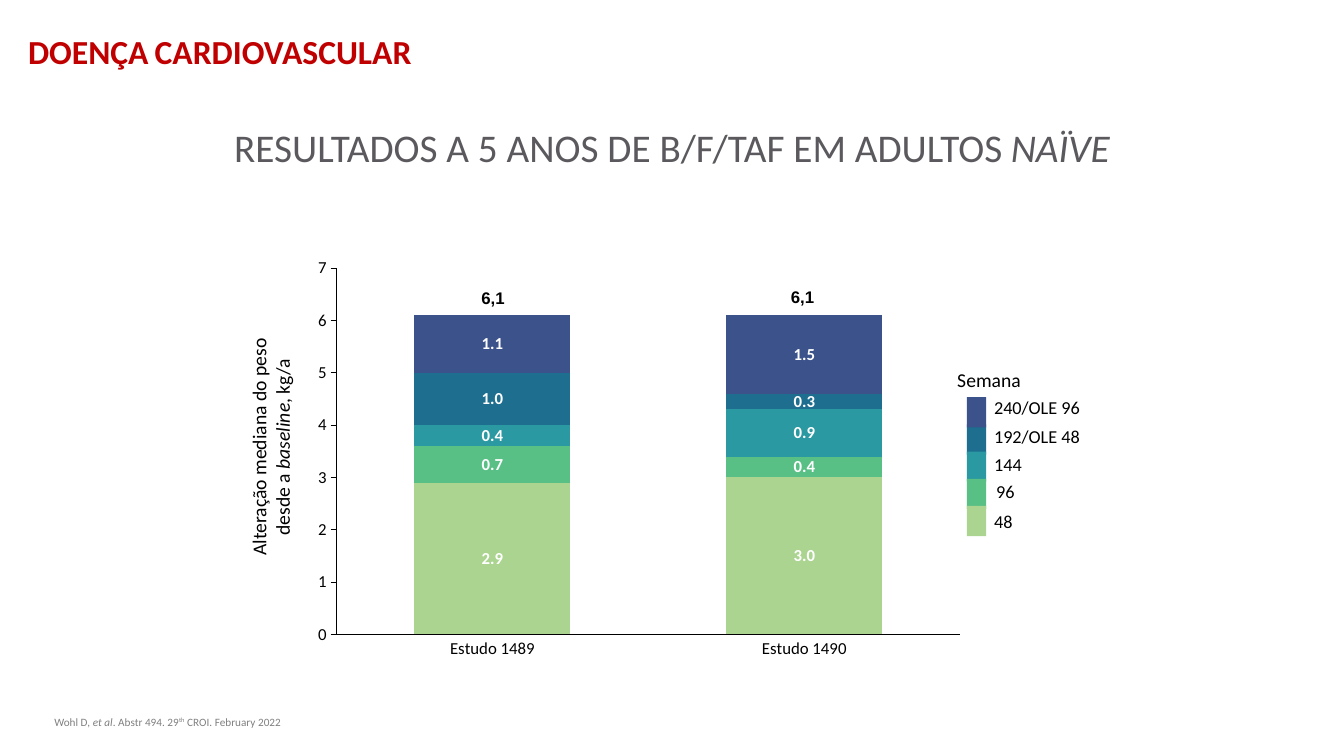
from lxml import etree
from pptx import Presentation
from pptx.chart.data import CategoryChartData
from pptx.dml.color import RGBColor
from pptx.enum import chart as charts, shapes, text
from pptx.util import Inches, Pt


def paint(target, color):
    """Give a fill or a font a solid colour from a hex string."""
    if hasattr(target, "solid"):
        target.solid()
        target = target.fore_color
    else:
        target = target.color
    target.rgb = RGBColor.from_string(color)


def write(box, pieces, size, color="000000", align=text.PP_ALIGN.LEFT,
          font="Calibri", bold=False, tight=False):
    """Fill a box with (words, style) pieces and return its paragraph."""
    frame = box.text_frame
    frame.word_wrap = not tight
    if tight:
        frame.margin_left = frame.margin_right = 0
        frame.margin_top = frame.margin_bottom = 0
        frame.vertical_anchor = text.MSO_ANCHOR.MIDDLE
    para = frame.paragraphs[0]
    para.alignment = align
    for words, style in pieces:
        if style == "break":
            para.add_line_break()
        span = para.add_run()
        span.text = words
        span.font.name = font
        span.font.size = Pt(size)
        span.font.bold = bold
        paint(span.font, color)
        if style == "italic":
            span.font.italic = True
        if style == "super":
            span.font._element.set("baseline", "30000")
        if style == "small caps":
            span.font._element.set("cap", "small")
    return para


CENTER = text.PP_ALIGN.CENTER
deck = Presentation()
deck.slide_width = Inches(13.33)
deck.slide_height = Inches(7.5)
page = deck.slides.add_slide(deck.slide_layouts[6])

# Headings and reference
heading = page.shapes.add_textbox(Inches(0.18), Inches(0.26), Inches(8.93), Inches(0.5))
write(heading, [("DOENÇA CARDIOVASCULAR", "small caps")], 24, "C00000", bold=True)

title = page.shapes.add_textbox(0, Inches(1.23), deck.slide_width, Inches(0.56))
para = write(title, [("RESULTADOS A 5 ANOS DE B/F/TAF EM ADULTOS ", ""), ("NAÏVE", "italic")],
             28, "5B595D", CENTER)
para.line_spacing = 0.9
para.space_before = Pt(10)

reference = page.shapes.add_textbox(Inches(0.44), Inches(7.03), Inches(4.45), Inches(0.29))
para = write(reference, [("Wohl D, ", ""), ("et al", "italic"), (". Abstr 494. 29", ""),
                         ("th", "super"), (" CROI. February 2022", "")], 8, "808080")
para.line_spacing = 1.1
para.space_before = Pt(10)

# Stacked columns, from the bottom segment up
weeks = [
    ("48", (2.9, 3.0), "AAD490"),
    ("96", (0.7, 0.4), "58C085"),
    ("144", (0.4, 0.9), "2B99A1"),
    ("192/OLE 48", (1.0, 0.3), "1D6E8F"),
    ("240/OLE 96", (1.1, 1.5), "3C528B"),
]
data = CategoryChartData()
data.categories = ["Estudo 1489", "Estudo 1490"]
for week, changes, color in weeks:
    data.add_series(week, changes)
chart = page.shapes.add_chart(charts.XL_CHART_TYPE.COLUMN_STACKED, Inches(3.02), Inches(2.47),
                              Inches(6.63), Inches(4.14), data).chart
chart.has_legend = False
chart.has_title = False
chart.font.name = "Calibri"
chart.font.size = Pt(12)
paint(chart.font, "000000")

plot = chart.plots[0]
plot.gap_width = 100
plot.overlap = 100
plot.vary_by_categories = False
for series, (week, changes, color) in zip(plot.series, weeks):
    paint(series.format.fill, color)
    labels = series.data_labels
    labels.show_value = True
    labels.number_format = "#,##0.0"
    labels.number_format_is_linked = False
    labels.font.name = "Calibri"
    labels.font.size = Pt(12)
    labels.font.bold = True
    paint(labels.font, "FFFFFF")

for axis, tick in ((chart.category_axis, charts.XL_TICK_MARK.NONE),
                   (chart.value_axis, charts.XL_TICK_MARK.OUTSIDE)):
    axis.has_major_gridlines = False
    axis.major_tick_mark = tick
    axis.minor_tick_mark = charts.XL_TICK_MARK.NONE
    axis.tick_labels.font.name = "Calibri"
    axis.tick_labels.font.size = Pt(12)
    paint(axis.tick_labels.font, "000000")
    axis.format.line.width = Pt(0.75)
    paint(axis.format.line.fill, "000000")
chart.value_axis.minimum_scale = 0
chart.value_axis.maximum_scale = 7
chart.value_axis.major_unit = 1
chart.value_axis.tick_labels.number_format = "0"
chart.value_axis.tick_labels.number_format_is_linked = False

# Fixed inner plot area, as fractions of the chart frame
namespace = "{http://schemas.openxmlformats.org/drawingml/2006/chart}"
area = chart._chartSpace.chart.plotArea
for old in area.findall(namespace + "layout"):
    area.remove(old)
layout = etree.Element(namespace + "layout")
manual = etree.SubElement(layout, namespace + "manualLayout")
for tag, value in (("layoutTarget", "inner"), ("xMode", "edge"), ("yMode", "edge"),
                   ("x", "0.048"), ("y", "0.046"), ("w", "0.933"), ("h", "0.878")):
    etree.SubElement(manual, namespace + tag).set("val", value)
area.insert(0, layout)

# Axis title and column totals
axis_title = page.shapes.add_textbox(Inches(1.59), Inches(4.2), Inches(2.18), Inches(0.47))
axis_title.rotation = 270
write(axis_title, [("Alteração mediana do peso", ""), ("desde a ", "break"),
                   ("baseline", "italic"), (", kg/a", "")], 14, align=CENTER, tight=True)

for left, top in ((4.38, 2.8), (7.45, 2.79)):
    total = page.shapes.add_textbox(Inches(left), Inches(top), Inches(1.02), Inches(0.3))
    total.text_frame.vertical_anchor = text.MSO_ANCHOR.MIDDLE
    write(total, [("6,1", "")], 12, align=CENTER, font="Arial", bold=True)

# Legend: white plates with words, then colour swatches with the top one in front
plates = [
    ("Semana", 9.49, 3.65, 0.64, 0.24, 14, CENTER),
    ("240/OLE 96", 9.86, 3.93, 0.86, 0.22, 13, text.PP_ALIGN.LEFT),
    ("192/OLE 48", 9.86, 4.22, 0.86, 0.22, 13, text.PP_ALIGN.LEFT),
    ("144", 9.86, 4.5, 0.28, 0.22, 13, text.PP_ALIGN.LEFT),
    ("96", 9.88, 4.76, 0.19, 0.22, 13, text.PP_ALIGN.LEFT),
    ("48", 9.86, 5.06, 0.19, 0.22, 13, text.PP_ALIGN.LEFT),
]
swatches = [("", 9.59, 3.94 + 0.27 * row, 0.19, 0.3, weeks[4 - row][2])
            for row in (1, 2, 3, 4, 0)]
for words, left, top, width, height, *look in plates + swatches:
    block = page.shapes.add_shape(shapes.MSO_SHAPE.RECTANGLE, Inches(left), Inches(top),
                                  Inches(width), Inches(height))
    block.shadow.inherit = False
    block.line.fill.background()
    if words:
        size, align = look
        paint(block.fill, "FFFFFF")
        write(block, [(words, "")], size, align=align, tight=True)
    else:
        paint(block.fill, look[0])

deck.save("out.pptx")
